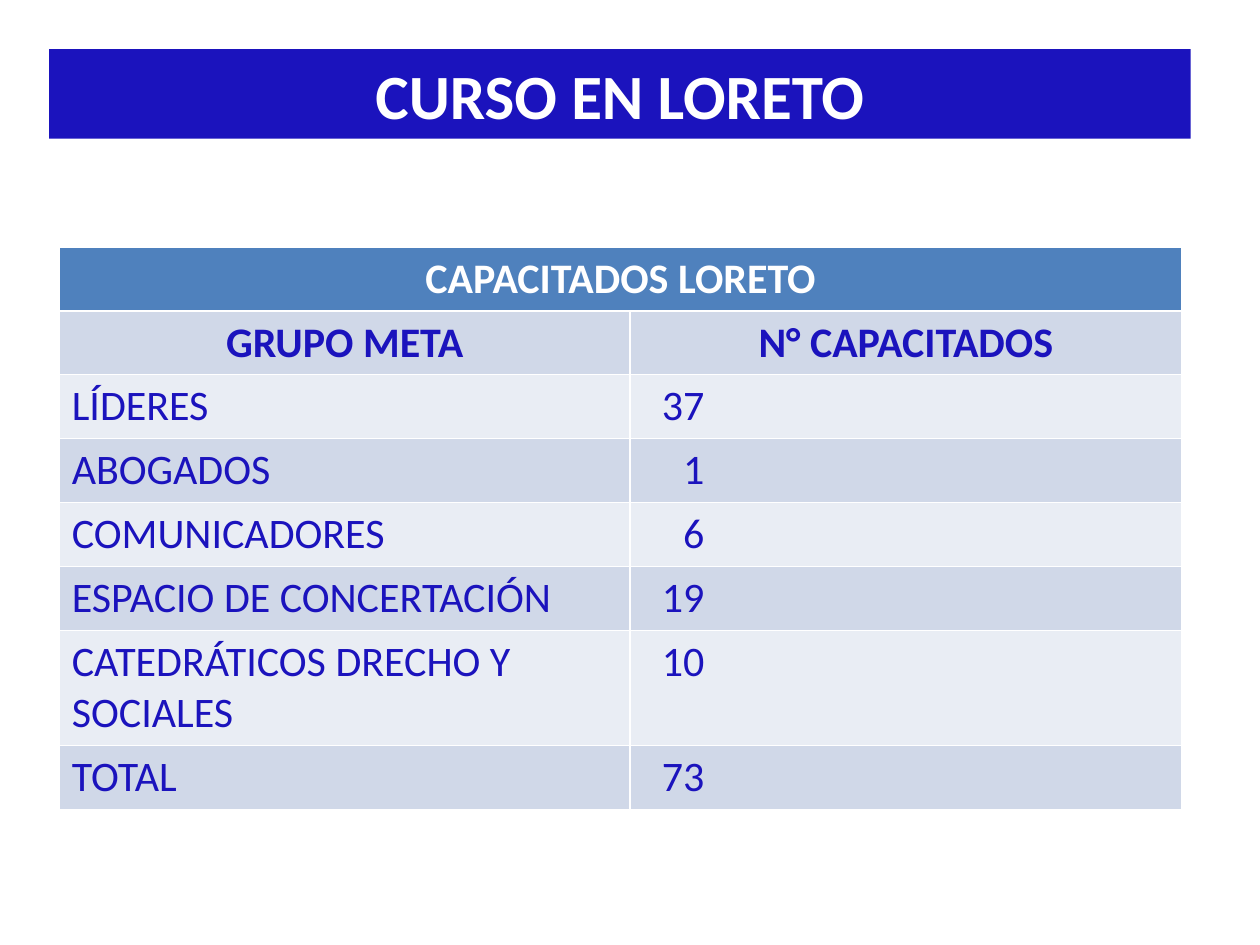
from pptx import Presentation
from pptx.dml.color import RGBColor
from pptx.enum.text import MSO_ANCHOR, PP_ALIGN
from pptx.util import Inches, Pt

LEFT, CENTER, RIGHT = PP_ALIGN.LEFT, PP_ALIGN.CENTER, PP_ALIGN.RIGHT
MIDDLE = MSO_ANCHOR.MIDDLE
TITLE_ONLY = 5

TITLE = "CURSO EN LORETO"
TABLE_HEADING = "CAPACITADOS LORETO"
COLUMN_HEADINGS = ("GRUPO META", "N° CAPACITADOS")
GROUPS = [
    ("LÍDERES", 37),
    ("ABOGADOS", 1),
    ("COMUNICADORES", 6),
    ("ESPACIO DE CONCERTACIÓN", 19),
    ("CATEDRÁTICOS DRECHO Y SOCIALES", 10),
    ("TOTAL", 73),
]

FONT = "Calibri"
BLUE, WHITE, HEADING_FILL = "1B13BD", "FFFFFF", "4F81BD"
BANDS = ("D0D8E8", "E9EDF4")
COLUMN_WIDTHS = (4.53, 4.38)
ROW_HEIGHT, TWO_LINE_HEIGHT = 0.5, 0.9
TWO_LINE_ROW = 6
NUMBER_MARGIN = 3.79  # right margin that lines up the units of the figures


def set_fill(target, color):
    target.fill.solid()
    target.fill.fore_color.rgb = RGBColor.from_string(color)


def write(frame, text, size, color, bold, align):
    frame.text = text
    paragraph = frame.paragraphs[0]
    paragraph.alignment = align
    font = paragraph.runs[0].font
    font.name, font.size, font.bold = FONT, Pt(size), bold
    font.color.rgb = RGBColor.from_string(color)


def add_title(slide):
    title = slide.shapes.title
    title.left, title.top = Inches(0.39), Inches(0.39)
    title.width, title.height = Inches(9.06), Inches(0.71)
    set_fill(title, BLUE)
    title.text_frame.vertical_anchor = MIDDLE
    write(title.text_frame, TITLE, 36, WHITE, True, CENTER)


def add_trainee_table(slide):
    rows = [COLUMN_HEADINGS, *GROUPS]
    heights = [ROW_HEIGHT] * (len(rows) + 1)
    heights[TWO_LINE_ROW] = TWO_LINE_HEIGHT
    table = slide.shapes.add_table(
        len(heights), len(COLUMN_WIDTHS), Inches(0.47), Inches(1.96),
        Inches(sum(COLUMN_WIDTHS)), Inches(sum(heights))).table
    for column, width in zip(table.columns, COLUMN_WIDTHS):
        column.width = Inches(width)
    for row, height in zip(table.rows, heights):
        row.height = Inches(height)

    heading = table.cell(0, 0)
    heading.merge(table.cell(0, 1))
    set_fill(heading, HEADING_FILL)
    write(heading.text_frame, TABLE_HEADING, 24, WHITE, True, CENTER)

    for r, values in enumerate(rows):
        is_heading = r == 0
        for c, value in enumerate(values):
            cell = table.cell(r + 1, c)
            set_fill(cell, BANDS[r % 2])
            align = CENTER if is_heading else (LEFT, RIGHT)[c]
            if align == RIGHT:
                cell.margin_right = Inches(NUMBER_MARGIN)
            write(cell.text_frame, str(value), 24, BLUE, is_heading, align)


def main():
    deck = Presentation()
    deck.slide_width, deck.slide_height = Inches(10), Inches(7.5)
    slide = deck.slides.add_slide(deck.slide_layouts[TITLE_ONLY])
    add_title(slide)
    add_trainee_table(slide)
    deck.save("out.pptx")


if __name__ == "__main__":
    main()
